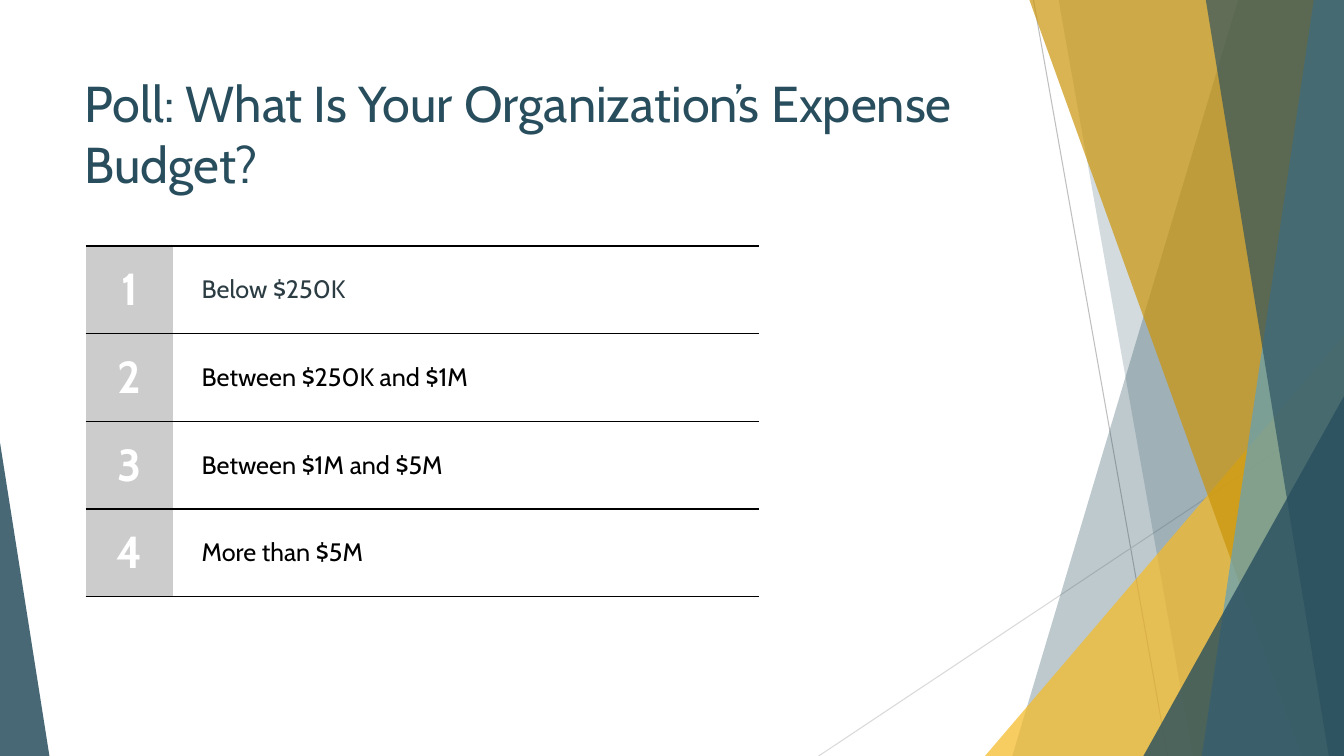
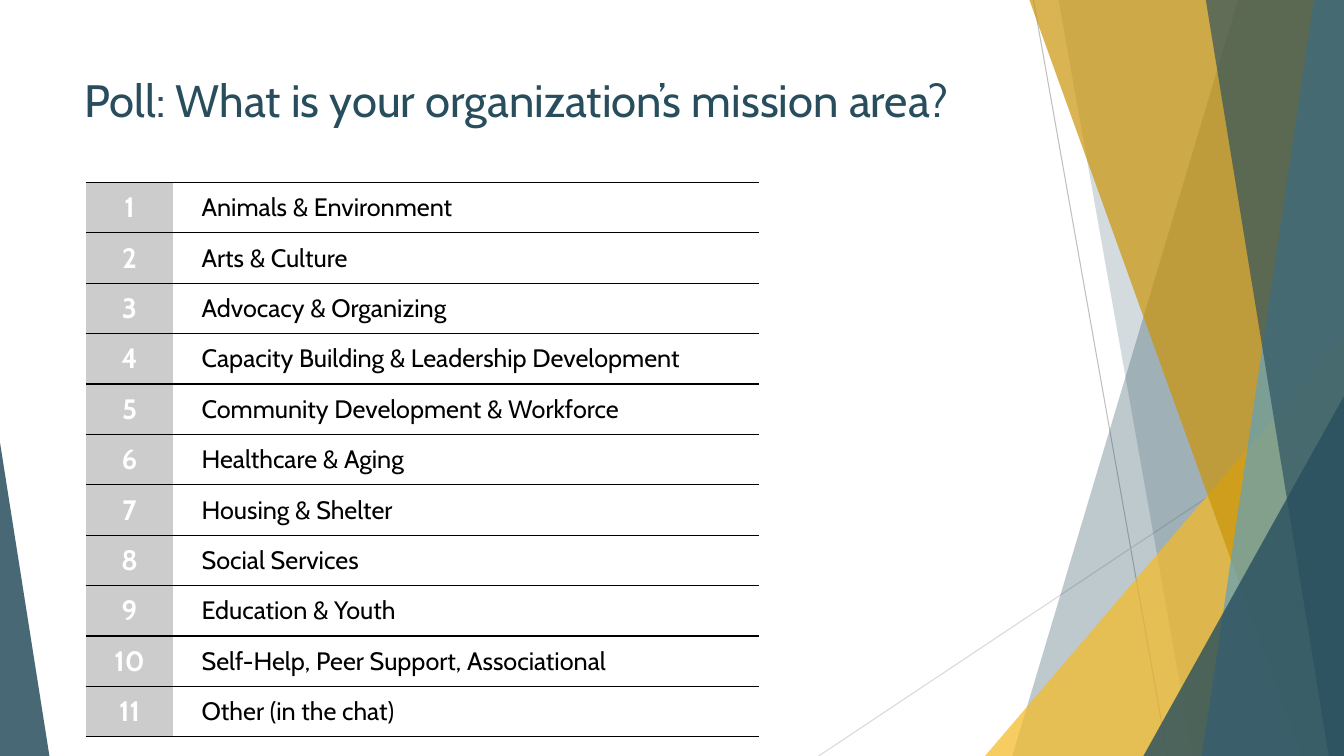
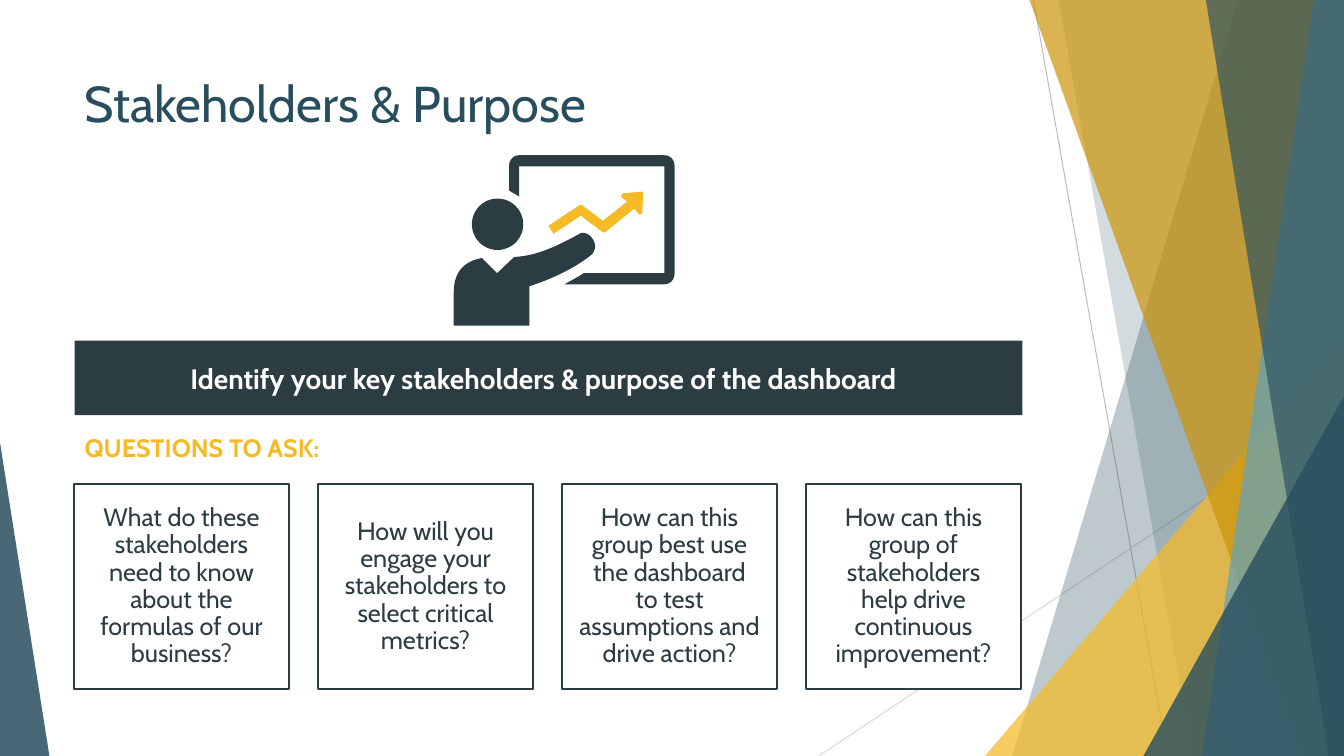
from lxml import etree
from pptx import Presentation
from pptx.dml.color import RGBColor
from pptx.enum.shapes import MSO_CONNECTOR, MSO_SHAPE
from pptx.enum.text import MSO_ANCHOR, PP_ALIGN
from pptx.oxml.ns import qn
from pptx.util import Inches, Pt

W, H = 13.33, 7.5
FONT = "Cabin"
COLORS = {
    "navy": "284E5E", "slate": "2C3C43", "gold": "F5BA26", "ochre": "CB9409",
    "sky": "61A1BC", "number": "CCCCCC", "black": "000000", "white": "FFFFFF",
    "line": "BFBFBF", "pale_line": "D9D9D9",
}
NO_TABLE_STYLE = "{2D5ABB26-0587-4C30-8999-92F81FD0307C}"

# Presenter icon: a pair is a corner, six numbers are a Bézier curve.
BOARD = [
    (5.15, 1.65), (6.59, 1.65), (6.59, 2.71), (5.79, 2.71),
    (5.73, 2.75, 5.67, 2.78, 5.6, 2.82), (6.59, 2.82),
    (6.65, 2.82, 6.69, 2.77, 6.69, 2.72), (6.69, 1.64),
    (6.69, 1.59, 6.65, 1.54, 6.59, 1.54), (5.15, 1.54),
    (5.09, 1.54, 5.05, 1.59, 5.05, 1.64), (5.05, 1.89),
    (5.08, 1.91, 5.12, 1.93, 5.15, 1.95),
]
BODY = [
    (5.25, 2.84), (5.5, 2.76, 5.71, 2.65, 5.85, 2.54),
    (5.91, 2.5, 5.92, 2.42, 5.87, 2.36), (5.85, 2.33, 5.81, 2.31, 5.78, 2.31),
    (5.76, 2.31, 5.75, 2.32, 5.73, 2.33), (5.42, 2.5, 5.26, 2.54, 5.1, 2.55),
    (4.93, 2.71), (4.78, 2.56), (4.61, 2.59, 4.5, 2.69, 4.5, 2.9),
    (4.5, 3.23), (5.25, 3.23),
]
TREND = [
    (5.79, 2.05), (5.78, 2.03, 5.76, 2.03, 5.74, 2.04), (5.44, 2.24),
    (5.49, 2.32), (5.76, 2.14), (5.96, 2.29), (5.98, 2.31, 6, 2.31, 6.02, 2.29),
    (6.29, 2.07), (6.34, 2.13), (6.37, 2.12), (6.38, 1.92), (6.37, 1.9),
    (6.17, 1.92), (6.16, 1.95), (6.22, 2), (5.98, 2.19),
]


def flatten(parts, steps=10):
    """Turn corners and Bézier curves into a list of points."""
    points = []
    for part in parts:
        if len(part) == 2:
            points.append(part)
            continue
        x0, y0 = points[-1]
        x1, y1, x2, y2, x3, y3 = part
        for i in range(1, steps + 1):
            t = i / steps
            u = 1 - t
            a, b, c, d = u ** 3, 3 * u * u * t, 3 * u * t * t, t ** 3
            points.append((a * x0 + b * x1 + c * x2 + d * x3,
                           a * y0 + b * y1 + c * y2 + d * y3))
    return points


class Deck:
    def __init__(self):
        self.prs = Presentation()
        self.prs.slide_width, self.prs.slide_height = Inches(W), Inches(H)
        self.s = None

    def color(self, name):
        return RGBColor.from_string(COLORS[name])

    def slide(self, title, size=36):
        self.s = self.prs.slides.add_slide(self.prs.slide_layouts[6])
        self.backdrop()
        self.text((0.74, 0.67, 9.4, 1.44), title, size, "navy")

    def backdrop(self):
        self.line((10.25, 0), (11.58, H), "line")
        self.line((W, 4.03), (8.12, H), "pale_line")
        self.ribbon(12.28, 10.04, "navy", 30)
        self.ribbon(10.5, 11.83, "navy", 20)
        self.triangle((9.77, 3.33, 3.56, 4.17), 1, "gold", 72)
        self.ribbon(10.21, 12.91, "ochre", 70)
        self.ribbon(13.03, 11.92, "sky", 70)
        self.ribbon(11.96, 13.18, "navy", 65)
        self.triangle((11.34, 3.93, 1.99, 3.57), 1, "navy", 80)
        self.triangle((0, 4.39, 0.49, 3.11), 0, "navy", 85)

    def line(self, start, end, color):
        c = self.s.shapes.add_connector(
            MSO_CONNECTOR.STRAIGHT, *(Inches(v) for v in start + end))
        c.line.color.rgb = self.color(color)
        c.line.width = Pt(0.75)
        etree.SubElement(c._element.spPr, qn("a:effectLst"))

    def paint(self, sp, fill, opacity=100, outline=None):
        sp.shadow.inherit = False
        sp.fill.solid()
        sp.fill.fore_color.rgb = self.color(fill)
        if opacity < 100:
            rgb = sp._element.spPr.find(".//" + qn("a:srgbClr"))
            etree.SubElement(rgb, qn("a:alpha"), val=str(opacity * 1000))
        if outline:
            sp.line.color.rgb = self.color(outline)
            sp.line.width = Pt(1.5)
        else:
            sp.line.fill.background()
        return sp

    def shape(self, kind, box, fill, opacity=100, outline=None):
        sp = self.s.shapes.add_shape(kind, *(Inches(v) for v in box))
        return self.paint(sp, fill, opacity, outline)

    def triangle(self, box, apex, fill, opacity):
        self.shape(MSO_SHAPE.ISOSCELES_TRIANGLE, box, fill, opacity).adjustments[0] = apex

    def outline(self, parts, fill, opacity=100):
        points = [(Inches(x), Inches(y)) for x, y in flatten(parts)]
        builder = self.s.shapes.build_freeform(*points[0])
        builder.add_line_segments(points[1:], close=True)
        self.paint(builder.convert_to_shape(), fill, opacity)

    def ribbon(self, top, bottom, fill, opacity):
        """Band from the given top and bottom x to the right slide edge."""
        self.outline([(top, 0), (W, 0), (W, H), (bottom, H)], fill, opacity)

    def style(self, p, size, color, bold=False, align=PP_ALIGN.LEFT):
        p.alignment = align
        p.font.name, p.font.size, p.font.bold = FONT, Pt(size), bold
        p.font.color.rgb = self.color(color)

    def set_text(self, sp, text, size, color, bold=False, align=PP_ALIGN.LEFT,
                 anchor=MSO_ANCHOR.TOP, insets=(0.1, 0.05, 0.1, 0.05), spacing=None):
        tf = sp.text_frame
        tf.word_wrap = True
        tf.vertical_anchor = anchor
        tf.margin_left, tf.margin_top, tf.margin_right, tf.margin_bottom = map(Inches, insets)
        tf.text = text
        for p in tf.paragraphs:
            self.style(p, size, color, bold, align)
            p.line_spacing = spacing

    def text(self, box, text, size, color, **options):
        sp = self.s.shapes.add_textbox(*(Inches(v) for v in box))
        self.set_text(sp, text, size, color, **options)

    def panel(self, box, text, size, color, fill, outline=None, **options):
        """Filled rectangle with centred text."""
        sp = self.shape(MSO_SHAPE.RECTANGLE, box, fill, outline=outline)
        self.set_text(sp, text, size, color, align=PP_ALIGN.CENTER,
                      anchor=MSO_ANCHOR.MIDDLE, **options)

    def rule_cell(self, cell):
        """Black rules above and below, none at the sides."""
        tc_pr = cell._tc.get_or_add_tcPr()
        for side in ("L", "R"):
            ln = etree.SubElement(tc_pr, qn("a:ln" + side), w="0")
            etree.SubElement(ln, qn("a:noFill"))
        for side in ("T", "B"):
            ln = etree.SubElement(tc_pr, qn("a:ln" + side), w=str(Pt(1)))
            fill = etree.SubElement(ln, qn("a:solidFill"))
            etree.SubElement(fill, qn("a:srgbClr"), val=COLORS["black"])

    def poll(self, top, row_height, number_size, answers, first_color="black"):
        """Numbered list of answers as a ruled table."""
        frame = self.s.shapes.add_table(
            len(answers), 2, Inches(0.85), Inches(top), Inches(6.68),
            Inches(row_height * len(answers)))
        table = frame.table
        table.first_row = table.horz_banding = False
        table._tbl.tblPr.find(qn("a:tableStyleId")).text = NO_TABLE_STYLE
        table.columns[0].width, table.columns[1].width = Inches(0.87), Inches(5.81)
        for i, answer in enumerate(answers):
            table.rows[i].height = Inches(row_height)
            number, label = table.cell(i, 0), table.cell(i, 1)
            for cell, value, left in ((number, str(i + 1), 0.14), (label, answer, 0.28)):
                self.rule_cell(cell)
                cell.text = value
                cell.vertical_anchor = MSO_ANCHOR.MIDDLE
                cell.margin_left, cell.margin_right = Inches(left), Inches(0.14)
                cell.margin_top = cell.margin_bottom = Inches(0.05)
            number.fill.solid()
            number.fill.fore_color.rgb = self.color("number")
            label.fill.background()
            self.style(number.text_frame.paragraphs[0], number_size, "white", True,
                       PP_ALIGN.CENTER)
            self.style(label.text_frame.paragraphs[0], 18,
                       "black" if i else first_color)

    def presenter(self):
        self.outline(BOARD, "slate")
        self.outline(BODY, "slate")
        self.shape(MSO_SHAPE.OVAL, (4.68, 1.97, 0.51, 0.51), "slate")
        self.outline(TREND, "gold")


def main():
    deck = Deck()

    deck.slide("Poll: What Is Your Organization’s Expense Budget?")
    deck.poll(2.44, 0.87, 32, [
        "Below $250K", "Between $250K and $1M", "Between $1M and $5M", "More than $5M",
    ], first_color="slate")

    deck.slide("Poll: What is your organization’s mission area?", 32.4)
    deck.poll(1.81, 0.5, 20, [
        "Animals & Environment",
        "Arts & Culture",
        "Advocacy & Organizing",
        "Capacity Building & Leadership Development",
        "Community Development & Workforce",
        "Healthcare & Aging",
        "Housing & Shelter",
        "Social Services",
        "Education & Youth",
        "Self-Help, Peer Support, Associational",
        "Other (in the chat)",
    ])

    deck.slide("Stakeholders & Purpose")
    deck.text((0.74, 4.14, 9.42, 0.54), "QUESTIONS TO ASK:", 18, "gold", bold=True,
              insets=(0.1, 0.15, 0.1, 0.05))
    deck.panel((0.74, 3.38, 9.4, 0.74),
               "Identify your key stakeholders & purpose of the dashboard",
               20, "white", "slate", bold=True, insets=(0.3, 0.2, 0.4, 0.2))
    questions = [
        "What do these stakeholders need to know about the formulas of our business?",
        "How will you engage your stakeholders to select critical metrics?",
        "How can this group best use the dashboard\nto test assumptions and drive action?",
        "How can this group of stakeholders help drive continuous improvement?",
    ]
    for i, question in enumerate(questions):
        deck.panel((0.73 + 2.42 * i, 4.8, 2.14, 2.04), question, 18, "slate", "white",
                   outline="slate", insets=(0.15, 0.1, 0.15, 0.1), spacing=0.9)
    deck.presenter()

    deck.prs.save("out.pptx")


if __name__ == "__main__":
    main()
